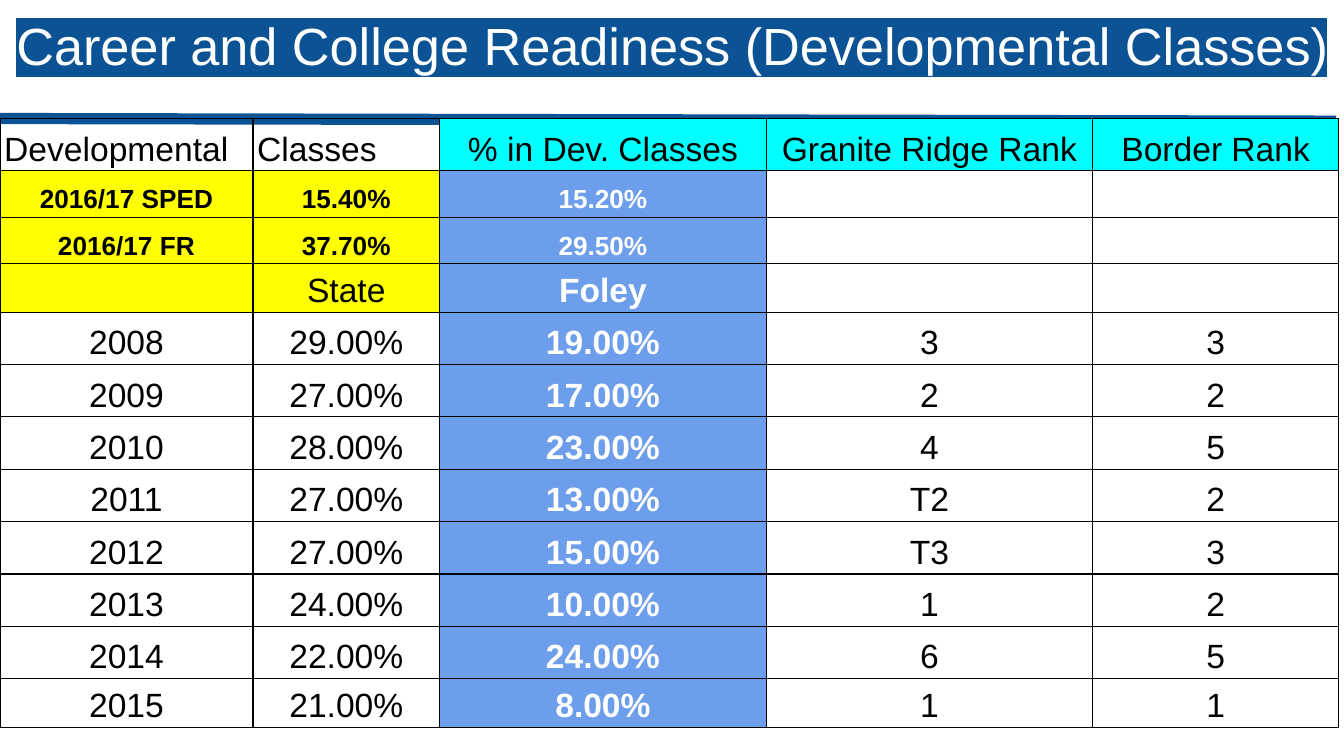
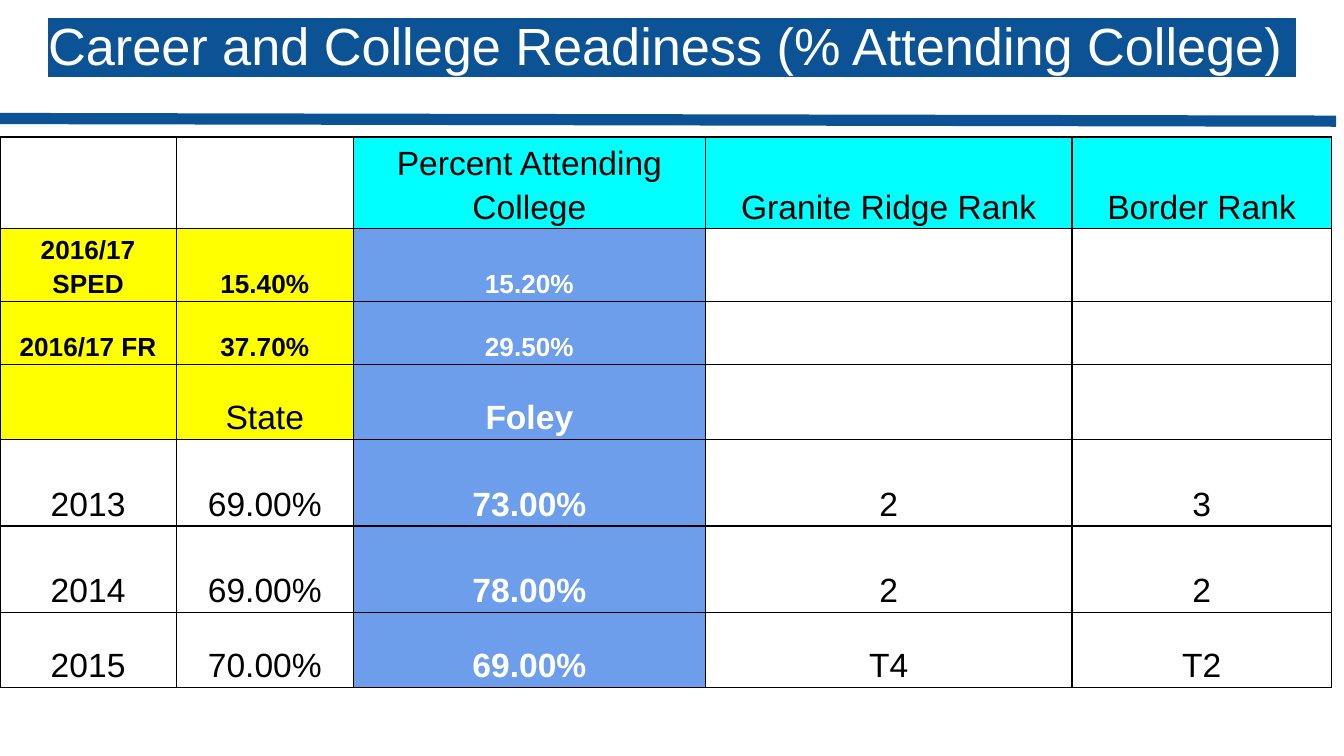
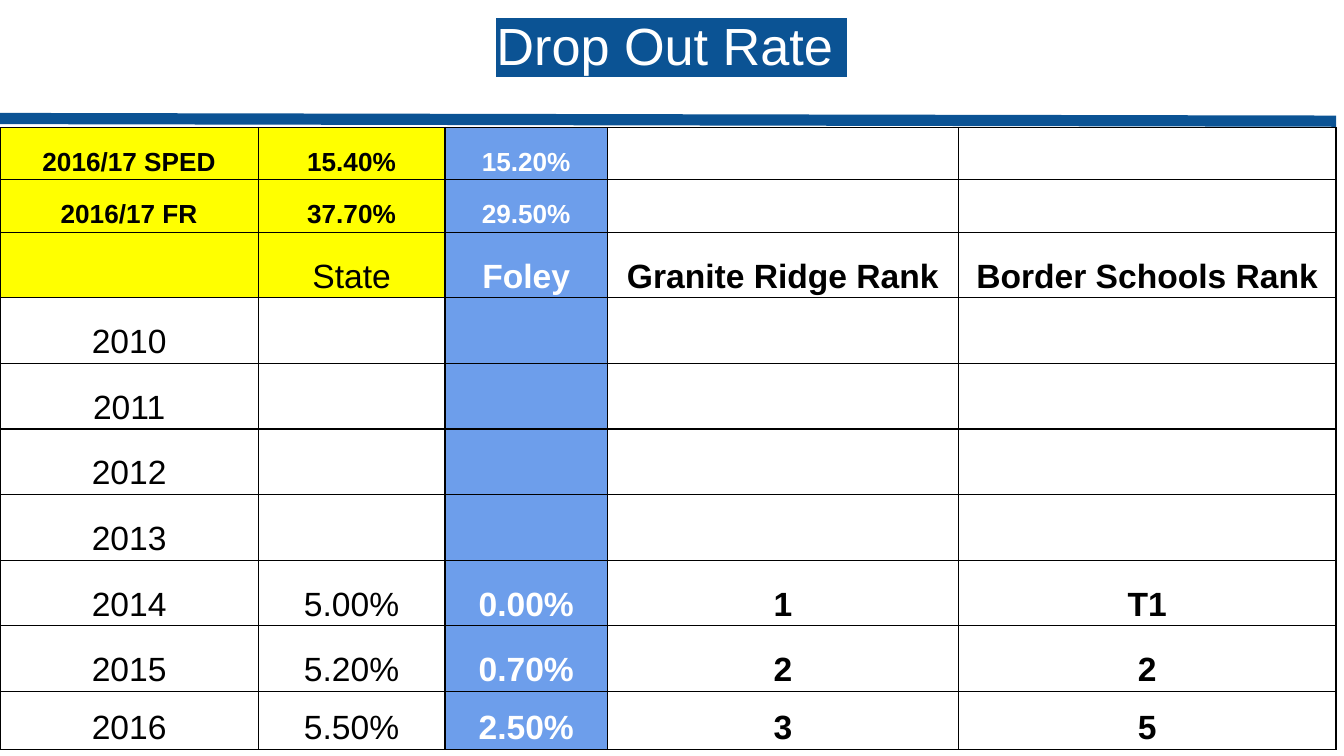
"""Build three school readiness slides, each with a banded title and a ranking table."""
from lxml.etree import SubElement
from pptx import Presentation
from pptx.dml.color import RGBColor
from pptx.enum.shapes import MSO_CONNECTOR
from pptx.enum.text import MSO_ANCHOR, MSO_AUTO_SIZE, PP_ALIGN
from pptx.oxml.ns import qn
from pptx.util import Cm, Pt

NAVY = RGBColor(0x0B, 0x53, 0x94)
CYAN = RGBColor(0x00, 0xFF, 0xFF)
YELLOW = RGBColor(0xFF, 0xFF, 0x00)
BLUE = RGBColor(0x6D, 0x9E, 0xEB)
BLACK = RGBColor(0x00, 0x00, 0x00)
WHITE = RGBColor(0xFF, 0xFF, 0xFF)
FONT = "Arial"
FOLEY_COLUMN = 2

PROFILE_ROWS = [
    ["2016/17 SPED", "15.40%", "15.20%", "", ""],
    ["2016/17 FR", "37.70%", "29.50%", "", ""],
]
STATE_ROW = ["", "State", "Foley", "", ""]

SLIDES = [
    {
        "title": "Career and College Readiness (Developmental Classes) ",
        "top": 2.24,
        "widths": [4.78, 3.53, 6.17, 6.17, 4.65],
        "heights": [0.99, 0.74, 0.74, 0.86] + [0.99] * 7 + [0.86],
        "has_header": True,
        "bold_ranks": False,
        "rows": [
            ["Developmental", "Classes", "% in Dev. Classes", "Granite Ridge Rank", "Border Rank"],
            *PROFILE_ROWS,
            STATE_ROW,
            ["2008", "29.00%", "19.00%", "3", "3"],
            ["2009", "27.00%", "17.00%", "2", "2"],
            ["2010", "28.00%", "23.00%", "4", "5"],
            ["2011", "27.00%", "13.00%", "T2", "2"],
            ["2012", "27.00%", "15.00%", "T3", "3"],
            ["2013", "24.00%", "10.00%", "1", "2"],
            ["2014", "22.00%", "24.00%", "6", "5"],
            ["2015", "21.00%", "8.00%", "1", "1"],
        ],
    },
    {
        "title": "Career and College Readiness (% Attending College) ",
        "top": 2.59,
        "widths": [3.33, 3.35, 6.65, 6.93, 4.9],
        "heights": [1.12, 1.19, 1.19, 1.42, 1.63, 1.63, 1.42],
        "has_header": True,
        "bold_ranks": False,
        "rows": [
            ["", "", "Percent Attending College", "Granite Ridge Rank", "Border Rank"],
            *PROFILE_ROWS,
            STATE_ROW,
            ["2013", "69.00%", "73.00%", "2", "3"],
            ["2014", "69.00%", "78.00%", "2", "2"],
            ["2015", "70.00%", "69.00%", "T4", "T2"],
        ],
    },
    {
        "title": "Drop Out Rate ",
        "top": 2.41,
        "widths": [4.88, 3.53, 3.07, 6.63, 7.14],
        "heights": [0.99] * 2 + [1.24] * 7 + [1.09],
        "has_header": False,
        "bold_ranks": True,
        "rows": [
            *PROFILE_ROWS,
            STATE_ROW[:3] + ["Granite Ridge Rank", "Border Schools Rank"],
            *[[year, "", "", "", ""] for year in ("2010", "2011", "2012", "2013")],
            ["2014", "5.00%", "0.00%", "1", "T1"],
            ["2015", "5.20%", "0.70%", "2", "2"],
            ["2016", "5.50%", "2.50%", "3", "5"],
        ],
    },
]


def style_run(span, size, color, bold=False):
    span.font.name = FONT
    span.font.size = Pt(size)
    span.font.bold = bold
    span.font.color.rgb = color


def add_borders(cell):
    properties = cell._tc.get_or_add_tcPr()
    for side in ("a:lnL", "a:lnR", "a:lnT", "a:lnB"):
        border = SubElement(properties, qn(side), w=str(Pt(0.75)))
        fill = SubElement(border, qn("a:solidFill"))
        SubElement(fill, qn("a:srgbClr"), val=str(BLACK))


deck = Presentation()
deck.slide_width = Cm(25.4)
deck.slide_height = Cm(14.29)

for content in SLIDES:
    page = deck.slides.add_slide(deck.slide_layouts[5])

    title = page.shapes.title
    title.left, title.top, title.width, title.height = Cm(0), Cm(0), Cm(25.4), Cm(1.93)
    frame = title.text_frame
    frame.text = content["title"]
    frame.word_wrap = True
    frame.auto_size = MSO_AUTO_SIZE.NONE
    frame.vertical_anchor = MSO_ANCHOR.TOP
    frame.margin_left = frame.margin_right = frame.margin_top = frame.margin_bottom = Cm(0.25)
    frame.paragraphs[0].alignment = PP_ALIGN.CENTER
    span = frame.paragraphs[0].runs[0]
    style_run(span, 28, WHITE)
    run_properties = span._r.get_or_add_rPr()
    highlight = SubElement(run_properties, qn("a:highlight"))
    SubElement(highlight, qn("a:srgbClr"), val=str(NAVY))
    run_properties.find(qn("a:solidFill")).addnext(highlight)

    rule = page.shapes.add_connector(MSO_CONNECTOR.STRAIGHT, Cm(0), Cm(2.24), Cm(25.25), Cm(2.29))
    rule.line.color.rgb = NAVY
    rule.line.width = Pt(6)
    SubElement(rule._element.spPr, qn("a:effectLst"))

    rows, widths, heights = content["rows"], content["widths"], content["heights"]
    table = page.shapes.add_table(
        len(rows), len(widths), Cm(0), Cm(content["top"]), Cm(sum(widths)), Cm(sum(heights))
    ).table
    table.first_row = table.horz_banding = False
    for column, width in zip(table.columns, widths):
        column.width = Cm(width)
    for table_row, height in zip(table.rows, heights):
        table_row.height = Cm(height)

    for row_number, row in enumerate(rows):
        is_header = content["has_header"] and row_number == 0
        is_profile = row in PROFILE_ROWS
        is_state = row[1] == "State"
        is_late = row_number >= len(rows) - 2
        for column_number, text in enumerate(row):
            is_foley = column_number == FOLEY_COLUMN and not is_header
            is_rank = column_number > FOLEY_COLUMN
            cell = table.cell(row_number, column_number)
            cell.vertical_anchor = MSO_ANCHOR.BOTTOM
            cell.margin_left = cell.margin_right = Cm(0.08)
            cell.margin_top = cell.margin_bottom = Cm(0.05)
            add_borders(cell)

            if is_foley:
                fill_color = BLUE
            elif is_header and column_number >= FOLEY_COLUMN:
                fill_color = CYAN
            elif (is_profile or is_state) and column_number < FOLEY_COLUMN:
                fill_color = YELLOW
            else:
                fill_color = None
            if fill_color is None:
                cell.fill.background()
            else:
                cell.fill.solid()
                cell.fill.fore_color.rgb = fill_color

            if not text:
                continue
            cell.text_frame.text = text
            para = cell.text_frame.paragraphs[0]
            if is_header and column_number < FOLEY_COLUMN:
                para.alignment = PP_ALIGN.LEFT
            else:
                para.alignment = PP_ALIGN.CENTER
                para.line_spacing = 1.0 if is_late and column_number else 1.15
            style_run(
                para.runs[0],
                14 if is_profile else 18,
                WHITE if is_foley else BLACK,
                is_profile or is_foley or (is_rank and content["bold_ranks"]),
            )

deck.save("out.pptx")
